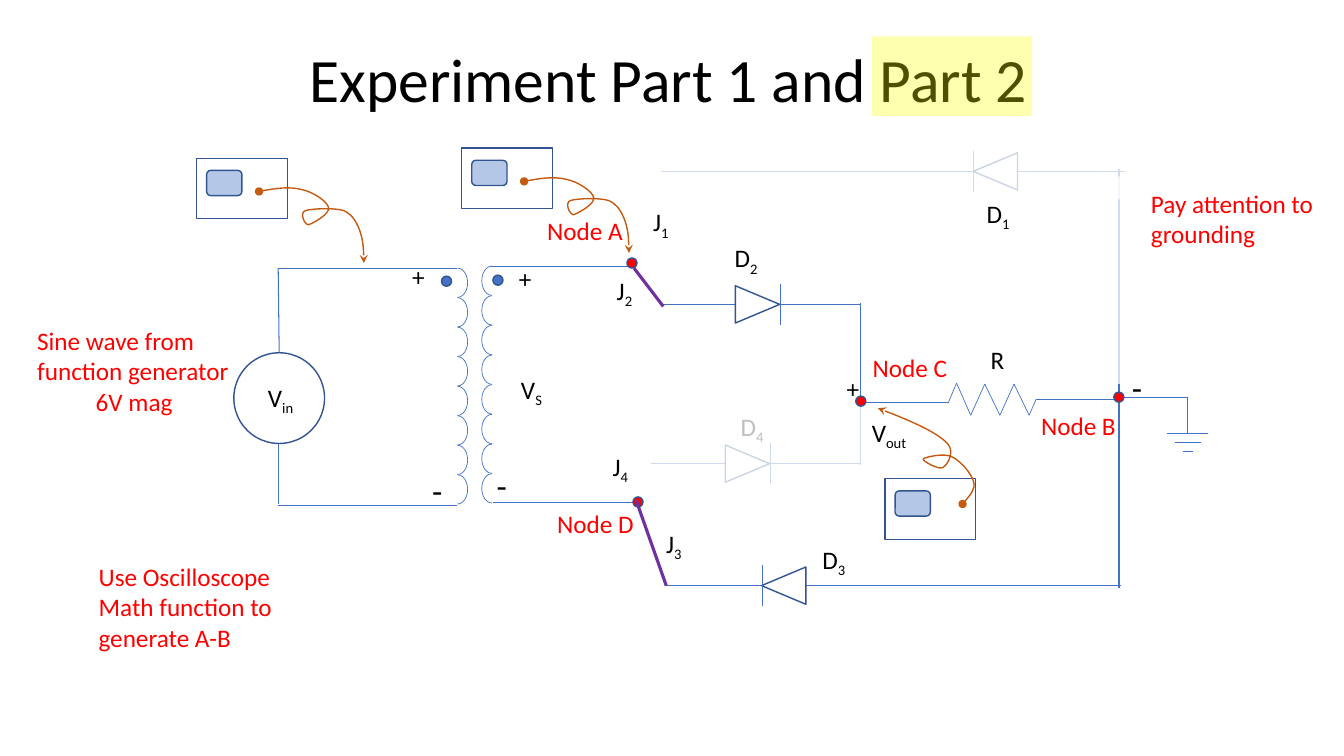
"""Draw the bridge rectifier experiment slide with its probes and faded parts."""
from itertools import pairwise
from pptx import Presentation
from pptx.dml import color
from pptx.enum import shapes, text
from pptx.oxml import ns
from pptx.util import Inches, Pt

TITLE = "Experiment Part 1 and Part 2"
BLUE, EDGE, RED, BLACK = "4472C4", "325491", "FF0000", "000000"
PURPLE, ORANGE, SCREEN = "7030A0", "C55A11", "B4C7E7"

WIRES = [
    (BLUE, 0.5, [(4.87, 2.64), (6.27, 2.64)]),
    (BLUE, 0.5, [(4.89, 4.98), (6.29, 4.98)]),
    (BLUE, 0.5, [(2.76, 2.66), (4.53, 2.66)]),
    (BLUE, 0.5, [(2.76, 5.01), (4.53, 5.01)]),
    (BLUE, 0.75, [(2.76, 2.66), (2.77, 3.5)]),
    (BLUE, 0.75, [(2.76, 4.4), (2.76, 5)]),
    (BLUE, 1, [(11.1, 1.68), (11.1, 5.83)]),
    (BLUE, 1, [(8.54, 3.01), (8.54, 4.61)]),
    (BLUE, 0.5, [(8.5, 3.99), (9.41, 3.99), (9.49, 3.8), (9.63, 4.12), (9.77, 3.81),
                 (9.92, 4.12), (10.06, 3.81), (10.21, 4.12), (10.28, 3.96), (11.06, 3.96)]),
    (BLUE, 0.5, [(11.13, 3.94), (11.78, 3.94), (11.78, 4.31)]),
    (BLUE, 0.5, [(11.58, 4.3), (11.98, 4.3)]),
    (BLUE, 0.5, [(11.66, 4.39), (11.91, 4.39)]),
    (BLUE, 0.5, [(11.74, 4.48), (11.84, 4.48)]),
]
JUMPERS = [
    (PURPLE, 2.25, [(6.58, 3.04), (6.29, 2.66)]),
    (PURPLE, 2.25, [(6.61, 5.81), (6.31, 4.96)]),
]
DIODES = [
    (6.56, 9.66, 11.16, 1.7, "left"),
    (6.56, 7.3, 8.54, 3.02, "right"),
    (6.61, 7.56, 11.12, 5.81, "left"),
    (6.46, 7.2, 8.54, 4.6, "right"),
]
COILS = [(4.44, 2.66, 4.71, (162, 54.39)), (4.78, 2.64, 4.7, (53.61, 162))]
COIL_TURNS = 8
DOTS = [
    (4.38, 2.74, BLUE), (4.89, 2.73, BLUE), (6.22, 2.56, RED),
    (11.05, 3.89, RED), (8.49, 3.93, RED), (6.28, 4.93, RED),
]
SIGNS = [
    ("+", 3.99, 2.54, 18), ("+", 5.05, 2.56, 18), ("+", 8.3, 3.65, 18),
    ("-", 4.19, 4.61, 24), ("-", 4.83, 4.56, 24), ("-", 11.13, 3.59, 24),
]
SYMBOLS = [
    ("V", "in", 2.56, 3.74), ("V", "S", 5.07, 3.66), ("V", "out", 8.55, 4.09),
    ("R", "", 9.73, 3.37),
    ("D", "1", 9.69, 1.92), ("D", "2", 7.19, 2.36), ("D", "3", 8.06, 5.35), ("D", "4", 7.25, 4.03),
    ("J", "1", 6.38, 2), ("J", "2", 6.02, 2.68), ("J", "3", 6.51, 5.19), ("J", "4", 5.98, 4.43),
]
NODES = [
    ("Node A", 5.33, 2.09), ("Node B", 10.23, 4.02),
    ("Node C", 8.56, 3.45), ("Node D", 5.43, 4.99),
]
NOTES = [
    (["Sine wave from function generator", "6V mag"], (0.27, 3.18, 2.12, 1.01)),
    (["Pay attention to grounding"], (11.32, 1.82, 1.85, 0.71)),
    (["Use Oscilloscope Math function to generate A-B"], (0.88, 5.52, 2.12, 1.01)),
]
LEAD_DOWN = [
    (0.62, 0.33), (0.77, 0.3), (0.92, 0.28), (1.04, 0.31), (1.15, 0.33), (1.3, 0.43),
    (1.31, 0.49), (1.33, 0.55), (1.15, 0.65), (1.11, 0.66), (1.07, 0.66), (1.02, 0.54),
    (1.08, 0.52), (1.14, 0.5), (1.37, 0.49), (1.46, 0.52), (1.55, 0.56), (1.59, 0.64),
    (1.62, 0.72), (1.65, 0.81), (1.66, 0.92), (1.66, 1.04),
]
LEAD_UP = [
    (0.77, 0.25), (0.83, 0.18), (0.9, 0.1), (0.88, 0.03), (0.86, -0.05), (0.75, -0.18),
    (0.66, -0.22), (0.58, -0.26), (0.39, -0.21), (0.38, -0.2), (0.36, -0.18), (0.53, -0.09),
    (0.57, -0.11), (0.62, -0.13), (0.68, -0.25), (0.64, -0.32), (0.61, -0.38), (0.5, -0.45),
    (0.38, -0.51), (0.26, -0.57), (0.09, -0.64), (-0.07, -0.7),
]
SCOPES = [(1.95, 1.57, LEAD_DOWN), (8.78, 4.75, LEAD_UP), (4.58, 1.47, LEAD_DOWN)]
COVERS = [
    ((6.55, 1.25, 4.83, 0.73), "FFFFFF", 75), ((10.82, 1.75, 0.6, 2.06), "FFFFFF", 75),
    ((6.42, 4.04, 2.17, 0.79), "FFFFFF", 75), ((8.65, 0.36, 1.59, 0.79), "FFFF00", 31),
]

deck = Presentation()
deck.slide_width, deck.slide_height = Inches(40 / 3), Inches(7.5)
slide = deck.slides.add_slide(deck.slide_layouts[5])
KIND = shapes.MSO_SHAPE


def paint(target, shade):
    target.rgb = color.RGBColor.from_string(shade)


def add_child(parent, tag, **attributes):
    child = parent.makeelement(ns.qn(tag), attributes)
    parent.append(child)
    return child


def write(paragraph, words, size, shade, subscript=False):
    run = paragraph.add_run()
    run.text = words
    run.font.name, run.font.size = "Calibri", Pt(size)
    paint(run.font.color, shade)
    if subscript:
        run.font._element.set("baseline", "-25000")


def label(box, lines, size=18, shade=BLACK, subscript=""):
    frame = slide.shapes.add_textbox(*map(Inches, box)).text_frame
    frame.word_wrap = True
    frame.auto_size = text.MSO_AUTO_SIZE.SHAPE_TO_FIT_TEXT
    for number, line in enumerate(lines):
        paragraph = frame.add_paragraph() if number else frame.paragraphs[0]
        paragraph.alignment = text.PP_ALIGN.CENTER if number else text.PP_ALIGN.LEFT
        write(paragraph, line, size, shade)
    if subscript:
        write(paragraph, subscript, size, shade, True)


def style(part, fill=None, edge=EDGE, weight=1):
    if fill:
        part.fill.solid()
        paint(part.fill.fore_color, fill)
    else:
        part.fill.background()
    if edge:
        paint(part.line.color, edge)
        part.line.width = Pt(weight)
    else:
        part.line.fill.background()
    part.shadow.inherit = False
    return part


def draw(kind, box, *looks):
    return style(slide.shapes.add_shape(kind, *map(Inches, box)), *looks)


def wire(shade, weight, points):
    for start, end in pairwise(points):
        segment = slide.shapes.add_connector(
            shapes.MSO_CONNECTOR.STRAIGHT, *map(Inches, start + end))
        paint(segment.line.color, shade)
        segment.line.width = Pt(weight)
        add_child(segment._element.spPr, "a:effectLst")


def diode(left, body, right, y, direction):
    wire(BLUE, 0.5, [(left, y), (body, y)])
    wire(BLUE, 0.5, [(body + 0.44, y), (right, y)])
    triangle = draw(KIND.ISOSCELES_TRIANGLE, (body + 0.03, y - 0.22, 0.37, 0.44))
    triangle.rotation = 90 if direction == "right" else 270
    bar = body + 0.44 if direction == "right" else body
    wire(BLUE, 0.5, [(bar, y - 0.2), (bar, y + 0.2)])


def scope(x, y, lead):
    draw(KIND.ROUNDED_RECTANGLE, (x + 0.1, y + 0.12, 0.35, 0.25), SCREEN)
    draw(KIND.RECTANGLE, (x, y, 0.9, 0.6))
    start, *knots = [(Inches(x + dx), Inches(y + dy)) for dx, dy in lead]
    outline = slide.shapes.build_freeform(*start)
    outline.add_line_segments(knots, close=False)
    probe = style(outline.convert_to_shape(), None, ORANGE)
    route = probe._element.spPr.find(".//" + ns.qn("a:path"))
    steps = route.findall(ns.qn("a:lnTo"))
    for first in range(0, len(steps), 3):
        bend = add_child(route, "a:cubicBezTo")
        for step in steps[first:first + 3]:
            bend.append(step[0])
            route.remove(step)
    stroke = probe._element.spPr.find(ns.qn("a:ln"))
    add_child(stroke, "a:headEnd", type="oval")
    add_child(stroke, "a:tailEnd", type="stealth")


title = slide.shapes.title
title.left, title.top, title.width, title.height = map(Inches, (0.92, 0.4, 11.43, 0.83))
title.text_frame.vertical_anchor = text.MSO_ANCHOR.MIDDLE
heading = title.text_frame.paragraphs[0]
heading.alignment, heading.line_spacing = text.PP_ALIGN.CENTER, 0.9
write(heading, TITLE, 44, BLACK)

for run_of_wire in WIRES:
    wire(*run_of_wire)
for x, top, last, angles in COILS:
    for turn in range(COIL_TURNS):
        y = top + turn * (last - top) / (COIL_TURNS - 1)
        loop = draw(KIND.ARC, (x, y, 0.2, 0.29), None, BLUE, 0.5)
        loop.adjustments[0], loop.adjustments[1] = angles
for parts in DIODES:
    diode(*parts)
draw(KIND.OVAL, (2.32, 3.5, 0.9, 0.9))
for x, y, shade in DOTS:
    draw(KIND.OVAL, (x, y, 0.1, 0.1), shade)
for jumper in JUMPERS:
    wire(*jumper)
for sign, x, y, size in SIGNS:
    label((x, y, 0.36, 0.5 if size == 24 else 0.4), [sign], size)
for letter, subscript, x, y in SYMBOLS:
    label((x, y, 0.71 if subscript else 0.33, 0.4), [letter], subscript=subscript)
for node, x, y in NODES:
    label((x, y, 1.06, 0.4), [node], shade=RED)
for instrument in SCOPES:
    scope(*instrument)
for box, shade, opacity in COVERS:
    cover = draw(KIND.RECTANGLE, box, shade, None)
    tint = cover._element.spPr.find(".//" + ns.qn("a:srgbClr"))
    add_child(tint, "a:alpha", val=str(opacity * 1000))
for lines, box in NOTES:
    label(box, lines, shade=RED)

deck.save("out.pptx")
